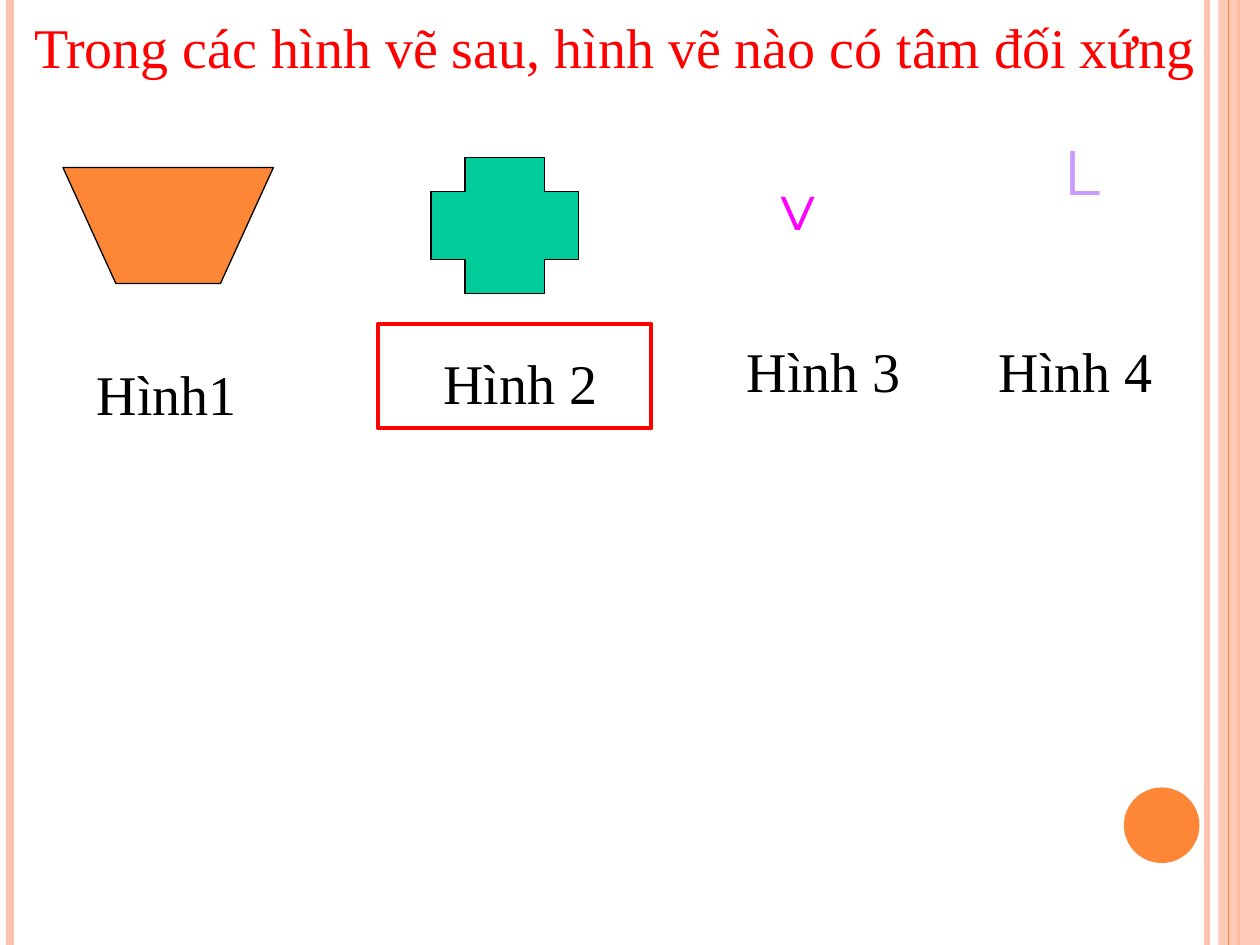
"""Build a Vietnamese geometry quiz slide about figures with a centre of symmetry."""
import pptx
import pptx.dml.color
import pptx.enum.shapes
import pptx.enum.text
import pptx.oxml
import pptx.util
import lxml.etree

THEME = {
    "orange": "FE8637", "peach": "FEC3AE", "green": "00CC99", "red": "FF0000",
    "black": "000000", "magenta": "FF00FF", "lilac": "CC99FF",
    "body_font": "Times New Roman", "letter_font": "Montserrat",
    "body_size": 32, "letter_size": 36,
}
SHAPES = pptx.enum.shapes.MSO_SHAPE
ALIGN = pptx.enum.text.PP_ALIGN
inch = pptx.util.Inches


def paint(shape, fill=None, line=None, width=0.75, opacity=100):
    """Set a shape's fill, outline and opacity, without a shadow."""
    shape.shadow.inherit = False
    if fill:
        shape.fill.solid()
        shape.fill.fore_color.rgb = pptx.dml.color.RGBColor.from_string(THEME[fill])
        if opacity < 100:
            color = shape.fill._xPr.find(".//" + pptx.oxml.ns.qn("a:srgbClr"))
            lxml.etree.SubElement(color, pptx.oxml.ns.qn("a:alpha"), val=str(opacity * 1000))
    else:
        shape.fill.background()
    if line:
        shape.line.color.rgb = pptx.dml.color.RGBColor.from_string(THEME[line])
        shape.line.width = pptx.util.Pt(width)
    else:
        shape.line.fill.background()


def write(box, text, color, face="body", align=ALIGN.LEFT, wrap=True, top=0.1):
    """Put one formatted paragraph at the top of a text box or placeholder."""
    frame = box.text_frame
    frame.text = text
    frame.word_wrap = wrap
    frame.auto_size = pptx.enum.text.MSO_AUTO_SIZE.NONE
    frame.vertical_anchor = pptx.enum.text.MSO_ANCHOR.TOP
    frame.margin_top, frame.margin_bottom = inch(top), 0
    paragraph = frame.paragraphs[0]
    paragraph.alignment = align
    paragraph.font.name = THEME[face + "_font"]
    paragraph.font.size = pptx.util.Pt(THEME[face + "_size"])
    paragraph.font.color.rgb = pptx.dml.color.RGBColor.from_string(THEME[color])


deck = pptx.Presentation()
deck.slide_width, deck.slide_height = inch(10), inch(7.5)
slide = deck.slides.add_slide(deck.slide_layouts[5])
shapes = slide.shapes

for x, color, width in [(9.58, "peach", 3), (0.08, "peach", 4.5),
                        (9.83, "orange", 1.5), (9.75, "orange", 0.75)]:
    if x == 9.75:
        band = shapes.add_shape(SHAPES.RECTANGLE, inch(9.67), 0, inch(0.33), deck.slide_height)
        paint(band, "peach", opacity=87)
    stripe = shapes.add_connector(pptx.enum.shapes.MSO_CONNECTOR.STRAIGHT,
                                  inch(x), 0, inch(x), deck.slide_height)
    stripe.line.color.rgb = pptx.dml.color.RGBColor.from_string(THEME[color])
    stripe.line.width = pptx.util.Pt(width)
    lxml.etree.SubElement(stripe._element.spPr, pptx.oxml.ns.qn("a:effectLst"))

disc = shapes.add_shape(SHAPES.OVAL, inch(8.92), inch(6.25), inch(0.6), inch(0.6))
paint(disc, "orange")

outline = shapes.build_freeform(inch(0.5), inch(1.33))
outline.add_line_segments([(inch(x), inch(y)) for x, y in
                           [(0.92, 2.25), (1.75, 2.25), (2.17, 1.33)]], close=True)
trapezoid = outline.convert_to_shape()
paint(trapezoid, "orange", "black")

cross = shapes.add_shape(SHAPES.CROSS, inch(3.42), inch(1.25), inch(1.17), inch(1.08))
cross.adjustments[0] = 0.25
paint(cross, "green", "black")

for letter, color, *place in [("v", "magenta", 5.62, 1.28, 1.42, 1.02),
                              ("L", "lilac", 8.17, 1, 0.83, 1.33)]:
    figure = shapes.add_textbox(*map(inch, place))
    write(figure, letter, color, "letter", ALIGN.CENTER, wrap=False, top=0.05)

answer = shapes.add_shape(SHAPES.RECTANGLE, inch(3), inch(2.57), inch(2.17), inch(0.83))
paint(answer, line="red", width=2.25)

question = shapes.title
question.left, question.top = inch(0.17), 0
question.width, question.height = inch(9.58), inch(0.64)
write(question, "Trong các hình vẽ sau, hình vẽ nào có tâm đối xứng", "red")

for caption, x, y, width in [("Hình1", 0.67, 2.75, 1.33), ("Hình 2", 3.42, 2.67, 1.5),
                             ("Hình 3", 5.83, 2.57, 1.5), ("Hình 4", 7.83, 2.57, 1.5)]:
    label = shapes.add_textbox(inch(x), inch(y), inch(width), inch(0.63))
    write(label, caption, "black")

deck.save("out.pptx")
